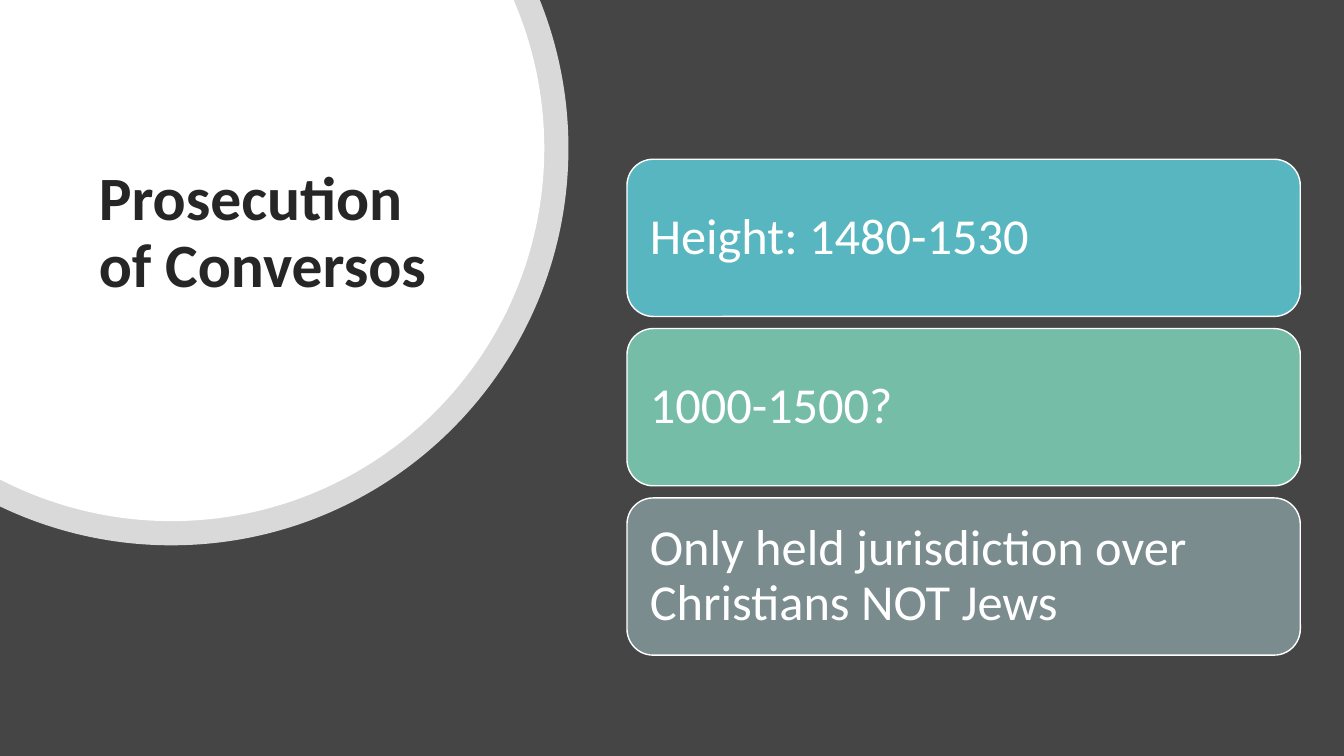
from dataclasses import dataclass
from itertools import pairwise
from math import acos, asin, cos, pi, sin, tan

from lxml import etree
from pptx import Presentation
from pptx.dml.color import RGBColor
from pptx.enum.shapes import MSO_SHAPE
from pptx.enum.text import MSO_ANCHOR, MSO_AUTO_SIZE, PP_ALIGN
from pptx.oxml.ns import qn
from pptx.slide import Slide
from pptx.text.text import TextFrame
from pptx.util import Emu, Pt

EMU_PER_PX = 9144  # 100 px to the inch
TITLE_ONLY = 5
LEFT = PP_ALIGN.LEFT
MIDDLE = MSO_ANCHOR.MIDDLE
NO_AUTOFIT = MSO_AUTO_SIZE.NONE
ROUNDED = MSO_SHAPE.ROUNDED_RECTANGLE

FONT = "Calibri"
CHARCOAL = RGBColor(0x45, 0x45, 0x45)
INK = RGBColor(0x26, 0x26, 0x26)
WHITE = RGBColor(0xFF, 0xFF, 0xFF)
BLUE = RGBColor(0x58, 0xB6, 0xC0)
GREEN = RGBColor(0x75, 0xBD, 0xA7)
SLATE = RGBColor(0x7A, 0x8C, 0x8E)

CENTER_X, CENTER_Y = 170, 147
CARD_LEFT, CARD_TOP, CARD_WIDTH, CARD_HEIGHT = 622, 158, 668, 156
CARD_PITCH = 168
CARD_INSET = 15


@dataclass(frozen=True)
class Disc:
    radius: int
    opacity: int


@dataclass(frozen=True)
class Card:
    text: str
    fill: RGBColor


DISCS = [Disc(394, 80), Disc(370, 100)]
CARDS = [
    Card("Height: 1480-1530", BLUE),
    Card("1000-1500?", GREEN),
    Card("Only held jurisdiction over Christians NOT Jews", SLATE),
]


def px(length: float) -> Emu:
    return Emu(round(length * EMU_PER_PX))


def write_text(frame: TextFrame, text: str, size: int, color: RGBColor, bold: bool) -> None:
    frame.text = text
    frame.word_wrap = True
    frame.auto_size = NO_AUTOFIT
    frame.vertical_anchor = MIDDLE
    para = frame.paragraphs[0]
    para.alignment = LEFT
    para.line_spacing = 0.9
    font = para.runs[0].font
    font.name = FONT
    font.size = Pt(size)
    font.bold = bold
    font.color.rgb = color


def rim_point(radius: int, angle: float, pull: float = 0) -> tuple[Emu, Emu]:
    """Return a point on the rim, moved along the tangent by pull radii."""
    return (
        px(CENTER_X + radius * (cos(angle) - pull * sin(angle))),
        px(CENTER_Y + radius * (sin(angle) + pull * cos(angle))),
    )


def bend(line: etree._Element, radius: int, start: float, end: float) -> None:
    """Turn a straight segment into a Bézier arc of the disc."""
    pull = 4 / 3 * tan((end - start) / 4)
    curve = etree.Element(qn("a:cubicBezTo"))
    for x, y in (
        rim_point(radius, start, pull),
        rim_point(radius, end, -pull),
        rim_point(radius, end),
    ):
        etree.SubElement(curve, qn("a:pt"), x=str(x), y=str(y))
    line.getparent().replace(line, curve)


def draw_disc(slide: Slide, disc: Disc) -> None:
    """Draw the part of the disc that lies inside the slide's top left corner."""
    angles = [asin(-CENTER_Y / disc.radius), 0, pi / 2, acos(-CENTER_X / disc.radius)]
    builder = slide.shapes.build_freeform(0, 0)
    builder.add_line_segments([rim_point(disc.radius, angle) for angle in angles], close=True)
    shape = builder.convert_to_shape()
    arc_lines = list(shape._element.iter(qn("a:lnTo")))[1:len(angles)]
    for line, (start, end) in zip(arc_lines, pairwise(angles)):
        bend(line, disc.radius, start, end)
    shape.shadow.inherit = False
    shape.line.fill.background()
    shape.fill.solid()
    shape.fill.fore_color.rgb = WHITE
    if disc.opacity < 100:
        color = shape.fill._xPr.find(f"{qn('a:solidFill')}/{qn('a:srgbClr')}")
        etree.SubElement(color, qn("a:alpha"), val=str(disc.opacity * 1000))


def draw_title(slide: Slide) -> None:
    title = slide.shapes.title
    title.left, title.top, title.width, title.height = px(88), px(66), px(352), px(332)
    write_text(title.text_frame, "Prosecution of Conversos", 44, INK, True)
    title.text_frame.paragraphs[0].space_after = Pt(6)
    slide.shapes._spTree.append(title._element)  # in front of the discs


def draw_card(slide: Slide, card: Card, top: int) -> None:
    box = slide.shapes.add_shape(ROUNDED, px(CARD_LEFT), px(top), px(CARD_WIDTH), px(CARD_HEIGHT))
    box.shadow.inherit = False
    box.fill.solid()
    box.fill.fore_color.rgb = card.fill
    box.line.color.rgb = WHITE
    box.line.width = Pt(1)
    frame = box.text_frame
    frame.margin_left = frame.margin_right = px(CARD_INSET)
    frame.margin_top = frame.margin_bottom = px(CARD_INSET)
    write_text(frame, card.text, 36, WHITE, False)


def main() -> None:
    deck = Presentation()
    deck.slide_width, deck.slide_height = px(1333.33), px(750)
    slide = deck.slides.add_slide(deck.slide_layouts[TITLE_ONLY])
    slide.background.fill.solid()
    slide.background.fill.fore_color.rgb = CHARCOAL
    for disc in DISCS:
        draw_disc(slide, disc)
    draw_title(slide)
    for index, card in enumerate(CARDS):
        draw_card(slide, card, CARD_TOP + index * CARD_PITCH)
    deck.save("out.pptx")


if __name__ == "__main__":
    main()
